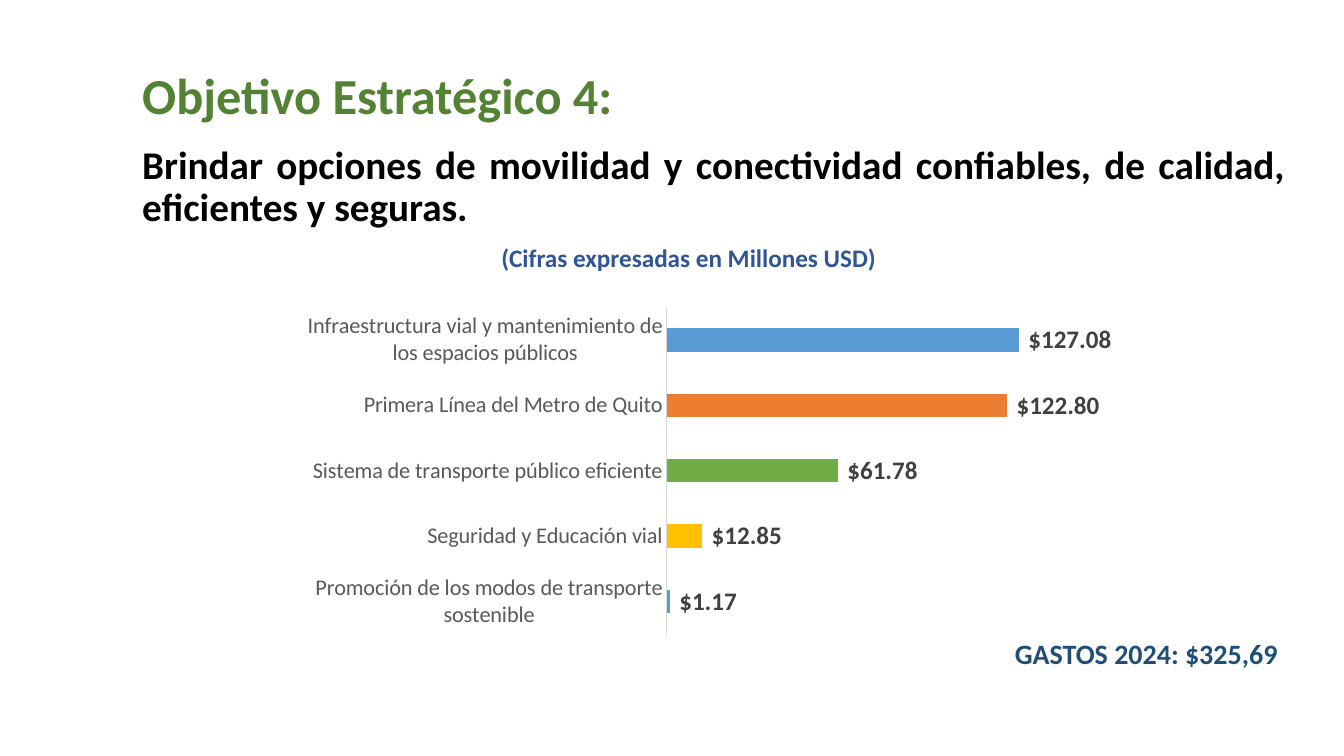
from lxml import etree
from pptx import Presentation
from pptx.chart.data import CategoryChartData
from pptx.dml.color import RGBColor
from pptx.enum.chart import XL_CHART_TYPE as ChartType, XL_LABEL_POSITION as LabelPos
from pptx.enum.chart import XL_TICK_MARK as TickMark
from pptx.enum.shapes import MSO_SHAPE as Shape
from pptx.enum.text import MSO_ANCHOR as Anchor, PP_ALIGN as Align
from pptx.oxml.ns import qn
from pptx.util import Pt

EMU_PER_PX = 9525
WHITE = RGBColor(0xFF, 0xFF, 0xFF)
BLACK = RGBColor(0x00, 0x00, 0x00)
HEADING_GREEN = RGBColor(0x54, 0x82, 0x35)
UNITS_BLUE = RGBColor(0x2F, 0x55, 0x97)
TOTAL_BLUE = RGBColor(0x1F, 0x4E, 0x79)
AXIS_GREY = RGBColor(0xD9, 0xD9, 0xD9)
CATEGORY_GREY = RGBColor(0x59, 0x59, 0x59)
LABEL_GREY = RGBColor(0x40, 0x40, 0x40)
BAR_BLUE = RGBColor(0x5B, 0x9B, 0xD5)
BAR_YELLOW = RGBColor(0xFF, 0xC0, 0x00)
BAR_GREEN = RGBColor(0x70, 0xAD, 0x47)
BAR_ORANGE = RGBColor(0xED, 0x7D, 0x31)

# Spending by programme in millions of USD, from the bottom bar up
SPENDING = [
    ("Promoción de los modos de transporte sostenible", 1.17, BAR_BLUE),
    ("Seguridad y Educación vial", 12.85, BAR_YELLOW),
    ("Sistema de transporte público eficiente", 61.78, BAR_GREEN),
    ("Primera Línea del Metro de Quito", 122.80, BAR_ORANGE),
    ("Infraestructura vial y mantenimiento de los espacios públicos", 127.08, BAR_BLUE),
]
PLOT_AREA = {"x": 0.46, "y": 0.04, "w": 0.47, "h": 0.91}


def px(*lengths):
    return [length * EMU_PER_PX for length in lengths]


class ObjectiveSlide:
    """Holds the font and the current slide; one method per kind of element."""

    def __init__(self, deck, font_name):
        self.font_name = font_name
        self.slide = deck.slides.add_slide(deck.slide_layouts[6])

    def style(self, font, size, color, bold=False):
        font.name, font.size, font.bold = self.font_name, Pt(size), bold
        font.color.rgb = color

    def fill_text(self, holder, text, size, color, align=Align.LEFT, spacing=1.0, wrap=True):
        frame = holder.text_frame
        frame.word_wrap = wrap
        frame.vertical_anchor = Anchor.MIDDLE
        paragraph = frame.paragraphs[0]
        paragraph.text = text
        paragraph.alignment = align
        paragraph.line_spacing = spacing
        self.style(paragraph.font, size, color, bold=True)

    def text(self, box, *content, **layout):
        self.fill_text(self.slide.shapes.add_textbox(*px(*box)), *content, **layout)

    def panel(self, box, fill, *content):
        panel = self.slide.shapes.add_shape(Shape.RECTANGLE, *px(*box))
        panel.shadow.inherit = False
        panel.fill.solid()
        panel.fill.fore_color.rgb = fill
        panel.line.fill.background()
        self.fill_text(panel, *content)

    def bar_chart(self, box, rows, axis_maximum):
        figures = CategoryChartData()
        figures.categories = [name for name, _, _ in rows]
        figures.add_series("Gastos", [amount for _, amount, _ in rows])
        chart = self.slide.shapes.add_chart(
            ChartType.BAR_CLUSTERED, *px(*box), figures).chart
        chart.has_legend = chart.has_title = False
        self.style(chart.font, 10, BLACK)

        # Axes
        categories, amounts = chart.category_axis, chart.value_axis
        categories.major_tick_mark = categories.minor_tick_mark = TickMark.NONE
        categories.format.line.color.rgb = AXIS_GREY
        categories.format.line.width = Pt(0.75)
        self.style(categories.tick_labels.font, 16, CATEGORY_GREY)
        amounts.minimum_scale, amounts.maximum_scale = 0, axis_maximum
        amounts.has_major_gridlines = False
        amounts.visible = False

        # Bars
        plot = chart.plots[0]
        plot.vary_by_categories = False
        plot.gap_width = 182
        spending = plot.series[0]
        for index, (_, _, color) in enumerate(rows):
            fill = spending.points[index].format.fill
            fill.solid()
            fill.fore_color.rgb = color

        # Value labels
        labels = spending.data_labels
        labels.show_value = True
        labels.position = LabelPos.OUTSIDE_END
        labels.number_format = '_("$"#,##0.00_)'
        labels.number_format_is_linked = False
        self.style(labels.font, 18, LABEL_GREY, bold=True)
        self.place_plot(chart)

    def place_plot(self, chart):
        plot_area = chart.plots[0]._element.getparent()
        for old_layout in plot_area.findall(qn("c:layout")):
            plot_area.remove(old_layout)
        layout = etree.Element(qn("c:layout"))
        plot_area.insert(0, layout)
        manual = etree.SubElement(layout, qn("c:manualLayout"))
        settings = [("layoutTarget", "inner"), ("xMode", "edge"), ("yMode", "edge")]
        settings += PLOT_AREA.items()
        for tag, value in settings:
            etree.SubElement(manual, qn(f"c:{tag}")).set("val", str(value))


def main():
    deck = Presentation()
    deck.slide_width, deck.slide_height = px(1280, 720)
    objective = ObjectiveSlide(deck, "Calibri")

    # Units and total
    objective.text((468, 226, 379, 38), "(Cifras expresadas en Millones USD)",
                   18, UNITS_BLUE, wrap=False)
    objective.panel((957, 601, 276, 42), WHITE, "GASTOS 2024: $325,69", 20, TOTAL_BLUE)

    # Objective and its statement
    objective.text((126, 53, 1107, 82), "Objetivo Estratégico 4:", 36, HEADING_GREEN,
                   align=Align.JUSTIFY, spacing=0.9)
    objective.text((126, 133, 1107, 92),
                   "Brindar opciones de movilidad y conectividad confiables, "
                   "de calidad, eficientes y seguras.",
                   28, BLACK, align=Align.JUSTIFY, spacing=0.9)

    # Spending by programme
    objective.bar_chart((273, 279, 791, 342), SPENDING, axis_maximum=140)
    deck.save("out.pptx")


if __name__ == "__main__":
    main()
